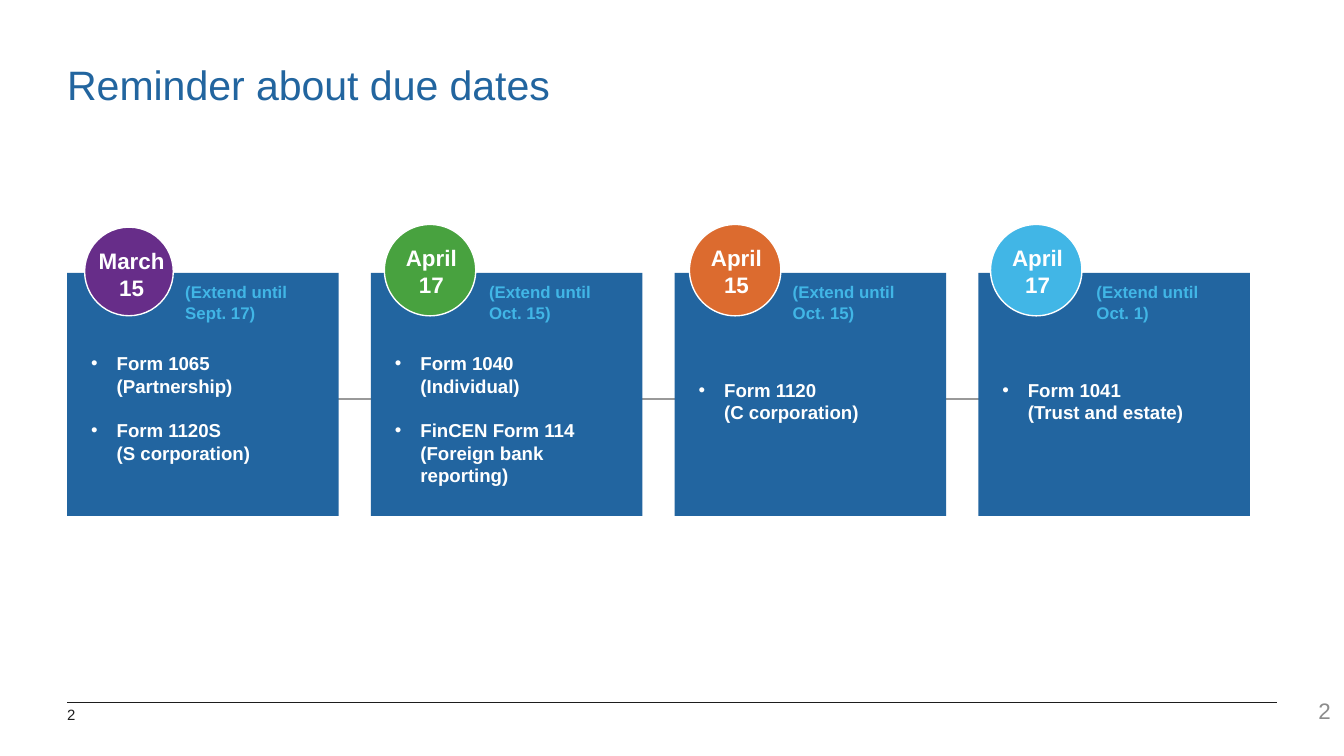
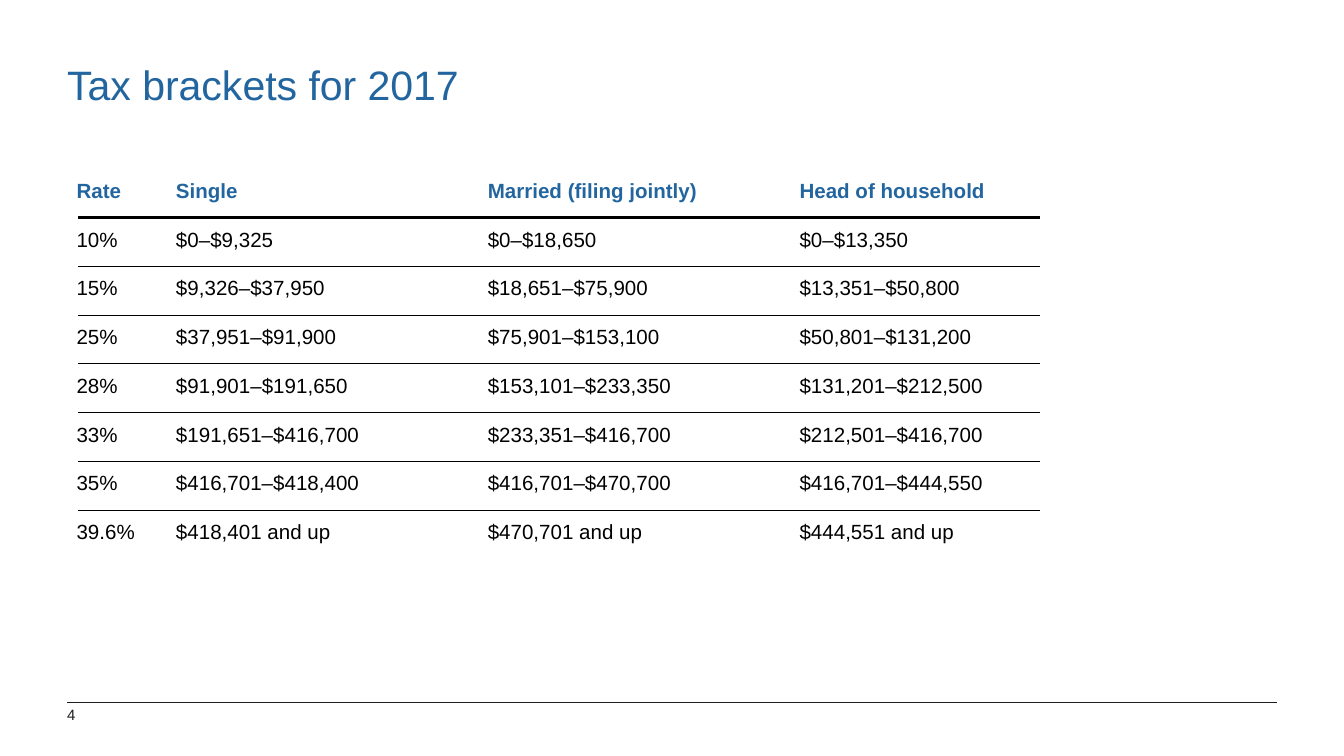
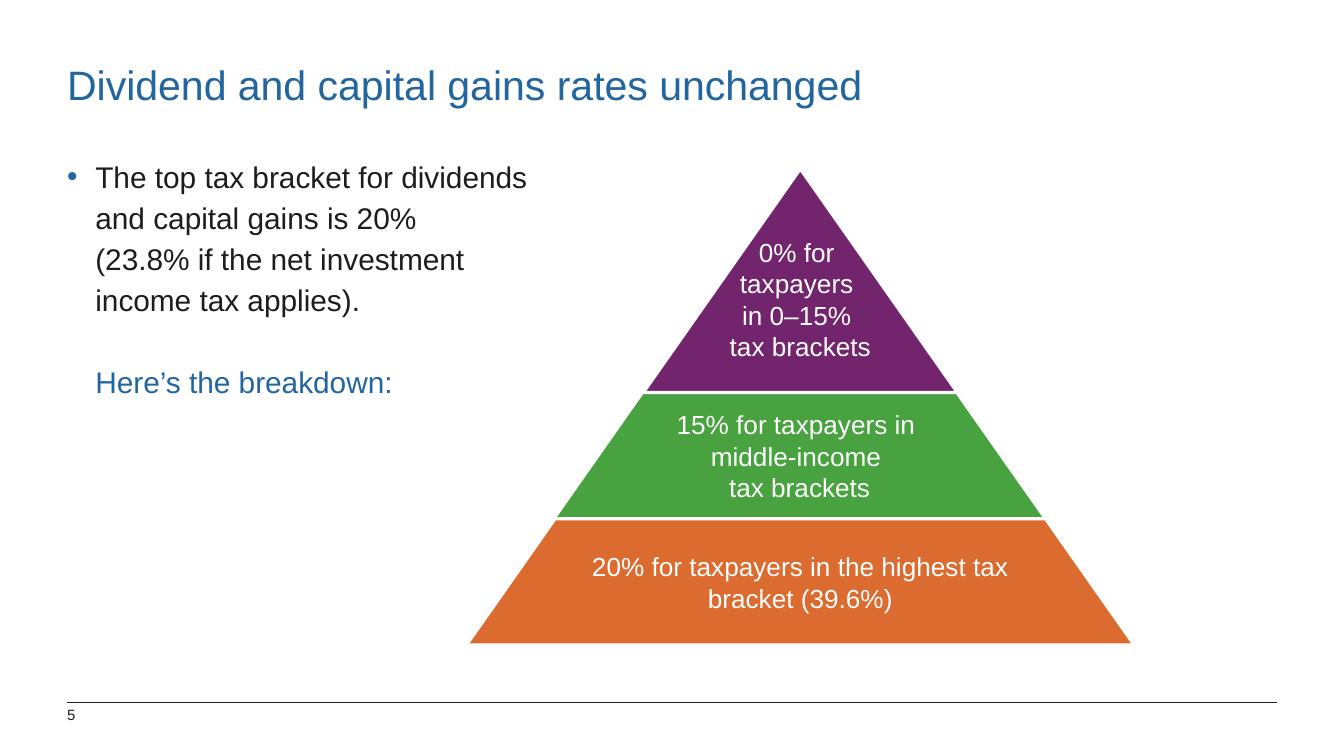
from copy import deepcopy

from lxml.etree import SubElement
from pptx import Presentation
from pptx.dml.color import RGBColor
from pptx.enum.shapes import MSO_CONNECTOR, MSO_SHAPE
from pptx.enum.text import MSO_ANCHOR, PP_ALIGN
from pptx.oxml.ns import qn
from pptx.util import Inches, Pt

HUES = {
    "title": "22659F", "card": "2265A0", "ink": "1D1D1D", "black": "000000",
    "white": "FFFFFF", "link": "999999", "page": "8C8C8C", "purple": "672D89",
    "plum": "72246C", "green": "48A23F", "orange": "DC6B2F", "sky": "41B6E6",
}
FONT = "Arial"
MID = {"alignment": PP_ALIGN.CENTER}

CARDS = [
    ("March\n15", "purple", 0.63, 0.66, "Sept. 17", 2.57,
     ["Form 1065\n(Partnership)", "Form 1120S\n(S corporation)"]),
    ("April\n17", "green", 2.86, 0.68, "Oct. 15", 2.57,
     ["Form 1040\n(Individual)", "FinCEN Form 114\n(Foreign bank reporting)"]),
    ("April\n15", "orange", 5.13, 0.68, "Oct. 15", 2.77, ["Form 1120\n(C corporation)"]),
    ("April\n17", "sky", 7.37, 0.68, "Oct. 1", 2.77, ["Form 1041\n(Trust and estate)"]),
]
RATES = [
    ("Rate", "Single", "Married (filing jointly)", "Head of household"),
    ("10%", "$0–$9,325", "$0–$18,650", "$0–$13,350"),
    ("15%", "$9,326–$37,950", "$18,651–$75,900", "$13,351–$50,800"),
    ("25%", "$37,951–$91,900", "$75,901–$153,100", "$50,801–$131,200"),
    ("28%", "$91,901–$191,650", "$153,101–$233,350", "$131,201–$212,500"),
    ("33%", "$191,651–$416,700", "$233,351–$416,700", "$212,501–$416,700"),
    ("35%", "$416,701–$418,400", "$416,701–$470,700", "$416,701–$444,550"),
    ("39.6%", "$418,401 and up", "$470,701 and up", "$444,551 and up"),
]
TIERS = [
    ("0% for \ntaxpayers \nin 0–15% \ntax brackets", "plum",
     (4.78, 1.26, 2.35, 1.67), (4.78, 2.35), 0.28),
    ("15% for taxpayers in \nmiddle-income \ntax brackets", "green",
     (4.12, 2.92, 3.66, 0.94), (4.76, 2.38), 0.02),
    ("20% for taxpayers in the highest tax bracket (39.6%)", "orange",
     (3.47, 3.86, 4.97, 0.94), (4.34, 3.23), 0.02),
]


def paint(hue):
    """Return the named colour."""
    return RGBColor.from_string(HUES[hue])


def apply(item, form):
    """Set each attribute in a dict of format values."""
    for name, value in form.items():
        setattr(item, name, value)


def write(para, words, size, hue, bold=False, form=None):
    """Fill a paragraph with styled text, keeping its line breaks."""
    para.text = words
    for run in para.runs:
        apply(run.font, {"name": FONT, "size": Pt(size), "bold": bold})
        run.font.color.rgb = paint(hue)
    for gap in para._p.findall(qn("a:br")):
        gap.append(deepcopy(para.runs[0]._r.rPr))
    apply(para, form or {})


def indent(para, depth, hue=None):
    """Indent a paragraph, with a bullet when a colour is named."""
    props = para._p.get_or_add_pPr()
    props.set("marL", str(Inches(depth)))
    props.set("indent", str(-Inches(depth) if hue else 0))
    if hue:
        tint = SubElement(props, qn("a:buClr"))
        SubElement(tint, qn("a:srgbClr")).set("val", HUES[hue])
        SubElement(props, qn("a:buFont")).set("typeface", FONT)
        SubElement(props, qn("a:buChar")).set("char", "•")


def frame(slide, box, pads=(0.1, 0.05, 0.1, 0.05), anchor=MSO_ANCHOR.TOP):
    """Add a wrapping text box and return its text frame."""
    body = slide.shapes.add_textbox(*map(Inches, box)).text_frame
    left, top, right, base = map(Inches, pads)
    apply(body, {"word_wrap": True, "vertical_anchor": anchor, "margin_left": left,
                 "margin_top": top, "margin_right": right, "margin_bottom": base})
    return body


def label(slide, box, words, size, hue, bold=False, form=None, **place):
    """Add a text box that holds one paragraph."""
    write(frame(slide, box, **place).paragraphs[0], words, size, hue, bold, form)


def rule(slide, left, right, top, hue, width):
    """Draw a level line."""
    line = slide.shapes.add_connector(
        MSO_CONNECTOR.STRAIGHT, *map(Inches, (left, top, right, top)))
    line.line.color.rgb = paint(hue)
    line.line.width = Pt(width)
    SubElement(line._element.spPr, qn("a:effectLst"))


def block(slide, kind, box, hue, edge=0):
    """Add a filled shape, with a white edge if a width is given."""
    shape = slide.shapes.add_shape(kind, *map(Inches, box))
    shape.shadow.inherit = False
    shape.fill.solid()
    shape.fill.fore_color.rgb = paint(hue)
    if edge:
        shape.line.color.rgb = paint("white")
        shape.line.width = Pt(edge)
    else:
        shape.line.fill.background()
    return shape


def start(deck, title, page):
    """Add a slide with its title, foot line and page number."""
    slide = deck.slides.add_slide(deck.slide_layouts[6])
    flat = (0, 0, 0, 0)
    rule(slide, 0.5, 9.5, 5.23, "ink", 0.5)
    label(slide, (0.5, 5.25, 0.36, 0.22), page, 8, "ink", pads=flat)
    label(slide, (0.5, 0.44, 8.5, 0.47), title, 22, "title", pads=flat)
    return slide


def card(slide, left, date, hue, dot, size, until, top, forms):
    """Draw a due date card with its round badge and forms."""
    block(slide, MSO_SHAPE.RECTANGLE, (left, 2.03, 2.02, 1.81), "card")
    body = frame(slide, (left + 0.08, top, 1.93, 0.54 * len(forms)))
    for i, words in enumerate(forms):
        para = body.add_paragraph() if i else body.paragraphs[0]
        indent(para, 0.19, "white")
        write(para, words, 10, "white", True, {"space_before": Pt(12)} if i else None)
    badge = 2.35 - size
    block(slide, MSO_SHAPE.OVAL, (dot, badge, size, size), hue, 0.75)
    label(slide, (dot - 0.1, badge + 0.1, 0.9, 0.51), date, 12, "white", True, MID)
    label(slide, (left + 0.78, 2.05, 1.22, 0.4), f"(Extend until\n{until})", 9, "sky", True)


def grid(slide, rows, left, top, widths, height):
    """Add a plain table with a bold head row."""
    table = slide.shapes.add_table(
        len(rows), len(widths), Inches(left), Inches(top),
        Inches(sum(widths)), Inches(height * len(rows))).table
    apply(table, {"first_row": False, "horz_banding": False})
    for col, width in zip(table.columns, widths):
        col.width = Inches(width)
    pads = {"margin_left": Inches(0.07), "margin_right": Inches(0.07),
            "margin_top": Inches(0.04), "margin_bottom": Inches(0.04)}
    for r, row in enumerate(rows):
        for c, words in enumerate(row):
            cell = table.cell(r, c)
            apply(cell, pads)
            cell.fill.solid()
            cell.fill.fore_color.rgb = paint("white")
            write(cell.text_frame.paragraphs[0], words, 11,
                  "black" if r else "title", not r)


def dates(deck):
    """Build the due dates slide."""
    slide = start(deck, "Reminder about due dates", "2")
    rule(slide, 1.23, 8.37, 2.97, "link", 1)
    label(slide, (8.25, 5.14, 1.75, 0.3), "2", 12, "page",
          form={"alignment": PP_ALIGN.RIGHT}, anchor=MSO_ANCHOR.MIDDLE)
    for i, data in enumerate(CARDS):
        card(slide, 0.5 + 2.26 * i, *data)


def rates(deck):
    """Build the tax brackets slide."""
    slide = start(deck, "Tax brackets for 2017", "4")
    height = 2.9 / len(RATES)
    grid(slide, RATES, 0.5, 1.3, (0.74, 2.32, 2.32, 2.32), height)
    for i in range(len(RATES) - 1):
        rule(slide, 0.58, 7.74, 1.62 + height * i, "black", 0.5 if i else 1.5)


def gains(deck):
    """Build the capital gains slide."""
    slide = start(deck, "Dividend and capital gains rates unchanged", "5")
    body = frame(slide, (0.5, 1.14, 8.5, 3.66), (0, 0, 0, 0))
    para, tail = body.paragraphs[0], body.add_paragraph()
    indent(para, 0.21, "title")
    write(para, "The top tax bracket for dividends\nand capital gains is 20%\n"
          "(23.8% if the net investment\nincome tax applies).", 16, "ink",
          form={"line_spacing": Pt(22)})
    indent(tail, 0.21)
    write(tail, "Here’s the breakdown:", 16, "title",
          form={"line_spacing": Pt(22), "space_before": Pt(22)})
    for words, hue, box, (left, width), pad in TIERS:
        tier = block(slide, MSO_SHAPE.TRAPEZOID, box, hue, 1.75)
        tier.adjustments[0] = 0.702
        label(slide, (left, box[1], width, box[3]), words, 14, "white", form=MID,
              pads=(0.02, pad, 0.02, 0.02), anchor=MSO_ANCHOR.MIDDLE)


def main():
    """Build and save the deck."""
    deck = Presentation()
    wide = Inches(10)
    apply(deck, {"slide_width": wide, "slide_height": wide * 9 // 16})
    for build in (dates, rates, gains):
        build(deck)
    deck.save("out.pptx")


if __name__ == "__main__":
    main()
